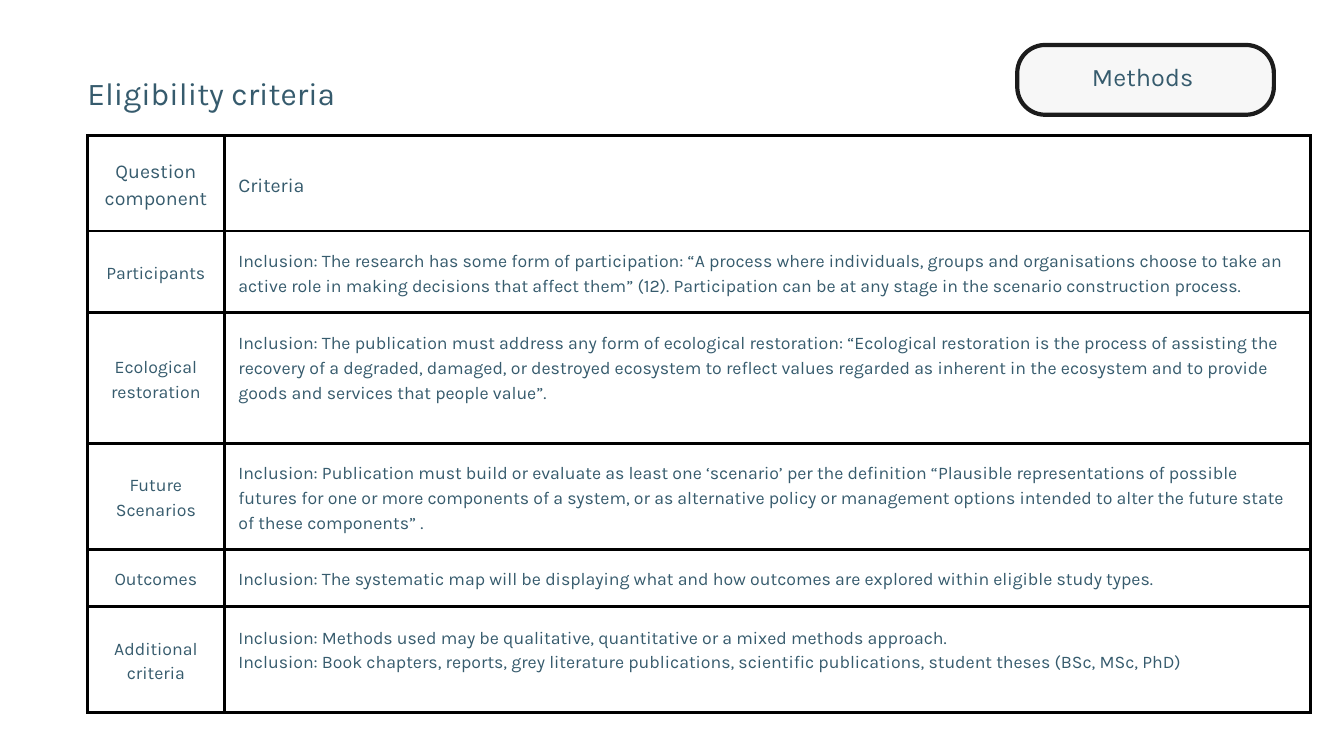
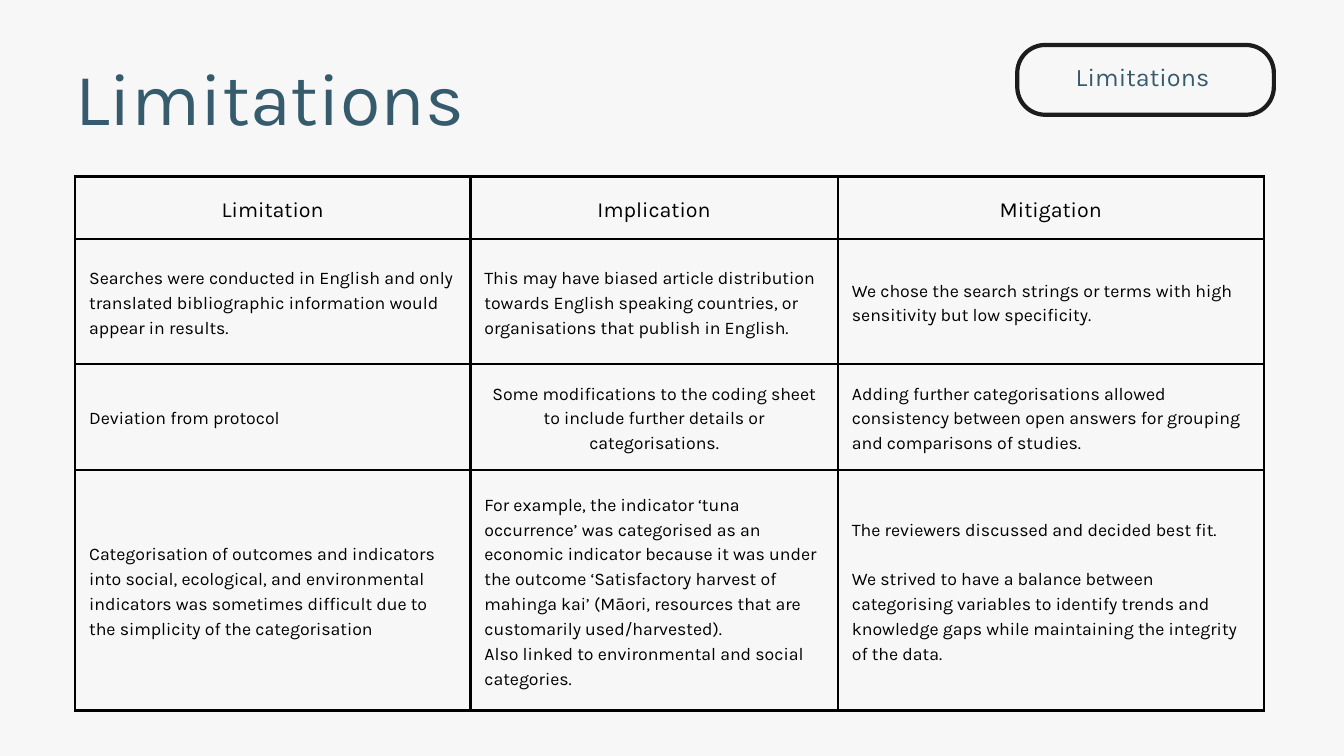
from dataclasses import dataclass

from lxml import etree
from pptx import Presentation
from pptx.dml.color import RGBColor
from pptx.enum.shapes import MSO_SHAPE
from pptx.enum.text import MSO_ANCHOR, MSO_AUTO_SIZE, PP_ALIGN
from pptx.oxml.ns import qn
from pptx.slide import Slide
from pptx.table import _Cell
from pptx.text.text import TextFrame
from pptx.util import Cm, Pt

LEFT, MID = PP_ALIGN.LEFT, PP_ALIGN.CENTER
CENTRE = MSO_ANCHOR.MIDDLE
GROW = MSO_AUTO_SIZE.SHAPE_TO_FIT_TEXT
PILL = MSO_SHAPE.ROUNDED_RECTANGLE


@dataclass(frozen=True)
class Theme:
    font: str = "Karla"
    teal: str = "365B6D"
    black: str = "000000"
    white: str = "FFFFFF"
    pale: str = "F7F7F7"
    ink: str = "1C1C1C"
    tag: float = 27
    body: float = 19
    rule: float = 3
    edge: float = 4.5
    leading: float = 1.4
    pad: float = 0.53


THEME = Theme()


@dataclass(frozen=True)
class Item:
    """One table cell; lift is extra room below its text, in cm."""
    text: tuple[str, ...]
    align: PP_ALIGN = LEFT
    lift: float = 0
    gap: float = 0


@dataclass(frozen=True)
class Title:
    text: str
    box: tuple[float, float, float, float]
    size: float


@dataclass(frozen=True)
class Grid:
    left: float
    top: float
    cols: tuple[float, ...]
    rows: tuple[float, ...]
    items: list[list[Item]]
    head: float
    color: str


@dataclass(frozen=True)
class Page:
    back: str
    tag: str
    title: Title
    grid: Grid


def cell(*text: str, lift: float = 0, gap: float = 0) -> Item:
    return Item(text, LEFT, lift, gap)


def mid(text: str) -> Item:
    return Item((text,), MID)


def rgb(code: str) -> RGBColor:
    return RGBColor.from_string(code)


def write(frame: TextFrame, text: tuple[str, ...], size: float, color: str,
          lead: float, align: PP_ALIGN = LEFT, gap: float = 0,
          track: int = 0) -> None:
    for i, line in enumerate(text):
        para = frame.add_paragraph() if i else frame.paragraphs[0]
        para.alignment = align
        para.line_spacing = Pt(lead)
        if i and gap:
            para.space_before = Pt(gap)
        run = para.add_run()
        run.text = line
        run.font.name, run.font.size = THEME.font, Pt(size)
        run.font.color.rgb = rgb(color)
        if track:
            run.font._element.set("spc", str(track))


def label(shapes, text: str, box: tuple[float, ...], size: float,
          align: PP_ALIGN = LEFT, track: int = 0) -> None:
    frame = shapes.add_textbox(*map(Cm, box)).text_frame
    frame.word_wrap = True
    frame.auto_size = GROW
    frame.margin_left = frame.margin_right = 0
    frame.margin_top = frame.margin_bottom = 0
    write(frame, (text,), size, THEME.teal, size, align, track=track)


def badge(slide: Slide, text: str) -> None:
    group = slide.shapes.add_group_shape()
    pill = group.shapes.add_shape(PILL, Cm(38.45), Cm(1.7), Cm(9.7), Cm(2.64))
    pill.adjustments[0] = 0.4
    pill.shadow.inherit = False
    pill.fill.solid()
    pill.fill.fore_color.rgb = rgb(THEME.pale)
    pill.line.color.rgb = rgb(THEME.ink)
    pill.line.width = Pt(THEME.edge)
    label(group.shapes, text, (39.52, 2.51, 7.34, 1.02), THEME.tag, MID, 10)


def border(box: _Cell) -> None:
    props = box._tc.get_or_add_tcPr()
    for i, side in enumerate(("a:lnL", "a:lnR", "a:lnT", "a:lnB")):
        line = etree.Element(qn(side), w=str(Pt(THEME.rule)))
        fill = etree.SubElement(line, qn("a:solidFill"))
        etree.SubElement(fill, qn("a:srgbClr"), val=THEME.black)
        props.insert(i, line)


def table(slide: Slide, grid: Grid) -> None:
    shape = slide.shapes.add_table(
        len(grid.rows), len(grid.cols), Cm(grid.left), Cm(grid.top),
        Cm(sum(grid.cols)), Cm(sum(grid.rows)))
    tab = shape.table
    tab.first_row = tab.horz_banding = False
    for col, width in zip(tab.columns, grid.cols):
        col.width = Cm(width)
    for r, (row, height) in enumerate(zip(tab.rows, grid.rows)):
        row.height = Cm(height)
        size = THEME.body if r else grid.head
        for box, item in zip(row.cells, grid.items[r]):
            box.fill.background()
            border(box)
            box.vertical_anchor = CENTRE
            box.margin_left = box.margin_right = box.margin_top = Cm(THEME.pad)
            box.margin_bottom = Cm(THEME.pad + item.lift)
            write(box.text_frame, item.text, size, grid.color,
                  size * THEME.leading, item.align, item.gap)


def draw(deck, page: Page) -> None:
    slide = deck.slides.add_slide(deck.slide_layouts[6])
    slide.background.fill.solid()
    slide.background.fill.fore_color.rgb = rgb(page.back)
    badge(slide, page.tag)
    table(slide, page.grid)
    label(slide.shapes, page.title.text, page.title.box, page.title.size)


# Eligibility criteria
RULES = [
    [mid("Question component"), cell("Criteria")],
    [mid("Participants"),
     cell("Inclusion: The research has some form of participation: “A process "
          "where individuals, groups and organisations choose to take an "
          "active role in making decisions that affect them” (12). "
          "Participation can be at any stage in the scenario construction "
          "process.")],
    [mid("Ecological restoration"),
     cell("Inclusion: The publication must address any form of ecological "
          "restoration: “Ecological restoration is the process of assisting "
          "the recovery of a degraded, damaged, or destroyed ecosystem to "
          "reflect values regarded as inherent in the ecosystem and to "
          "provide goods and services that people value”.", lift=0.84)],
    [mid("Future Scenarios"),
     cell("Inclusion: Publication must build or evaluate as least one "
          "‘scenario’ per the definition “Plausible representations of "
          "possible futures for one or more components of a system, or as "
          "alternative policy or management options intended to alter the "
          "future state of these components” .")],
    [mid("Outcomes"),
     cell("Inclusion: The systematic map will be displaying what and how "
          "outcomes are explored within eligible study types.")],
    [mid("Additional criteria"),
     cell("Inclusion: Methods used may be qualitative, quantitative or a "
          "mixed methods approach.",
          "Inclusion: Book chapters, reports, grey literature publications, "
          "scientific publications, student theses (BSc, MSc, PhD)",
          lift=0.84)],
]

# Limitations
LIMITS = [
    [mid("Limitation"), mid("Implication"), mid("Mitigation")],
    [cell("Searches were conducted in English and only translated "
          "bibliographic information would appear in results."),
     cell("This may have biased article distribution towards English "
          "speaking countries, or organisations that publish in English."),
     cell("We chose the search strings or terms with high sensitivity but "
          "low specificity.")],
    [cell("Deviation from protocol"),
     mid("Some modifications to the coding sheet to include further details "
         "or categorisations."),
     cell("Adding further categorisations allowed consistency between open "
          "answers for grouping and comparisons of studies.")],
    [cell("Categorisation of outcomes and indicators into social, "
          "ecological, and environmental indicators was sometimes difficult "
          "due to the simplicity of the categorisation"),
     cell("For example, the indicator ‘tuna occurrence’ was categorised as "
          "an economic indicator because it was under the outcome "
          "‘Satisfactory harvest of mahinga kai’ (Māori, resources that are "
          "customarily used/harvested).",
          "Also linked to environmental and social categories."),
     cell("The reviewers discussed and decided best fit.",
          "We strived to have a balance between categorising variables to "
          "identify trends and knowledge gaps while maintaining the "
          "integrity of the data.", gap=THEME.body * THEME.leading)],
]

PAGES = (
    Page(THEME.white, "Methods",
         Title("Eligibility criteria", (3.3, 3.02, 10.46, 1.27), 34),
         Grid(3.3, 5.13, (5.18, 41.05), (3.61, 3.07, 4.95, 4.01, 2.16, 4.01),
              RULES, 21, THEME.teal)),
    Page(THEME.pale, "Limitations",
         Title("Limitations", (2.84, 2.51, 25.04, 2.95), 79),
         Grid(2.84, 6.68, (14.94, 13.89, 16.1), (2.36, 4.72, 4.01, 9.09),
              LIMITS, 23, THEME.black)),
)


def main() -> None:
    deck = Presentation()
    deck.slide_width, deck.slide_height = Cm(50.8), Cm(28.58)
    for page in PAGES:
        draw(deck, page)
    deck.save("out.pptx")


if __name__ == "__main__":
    main()
